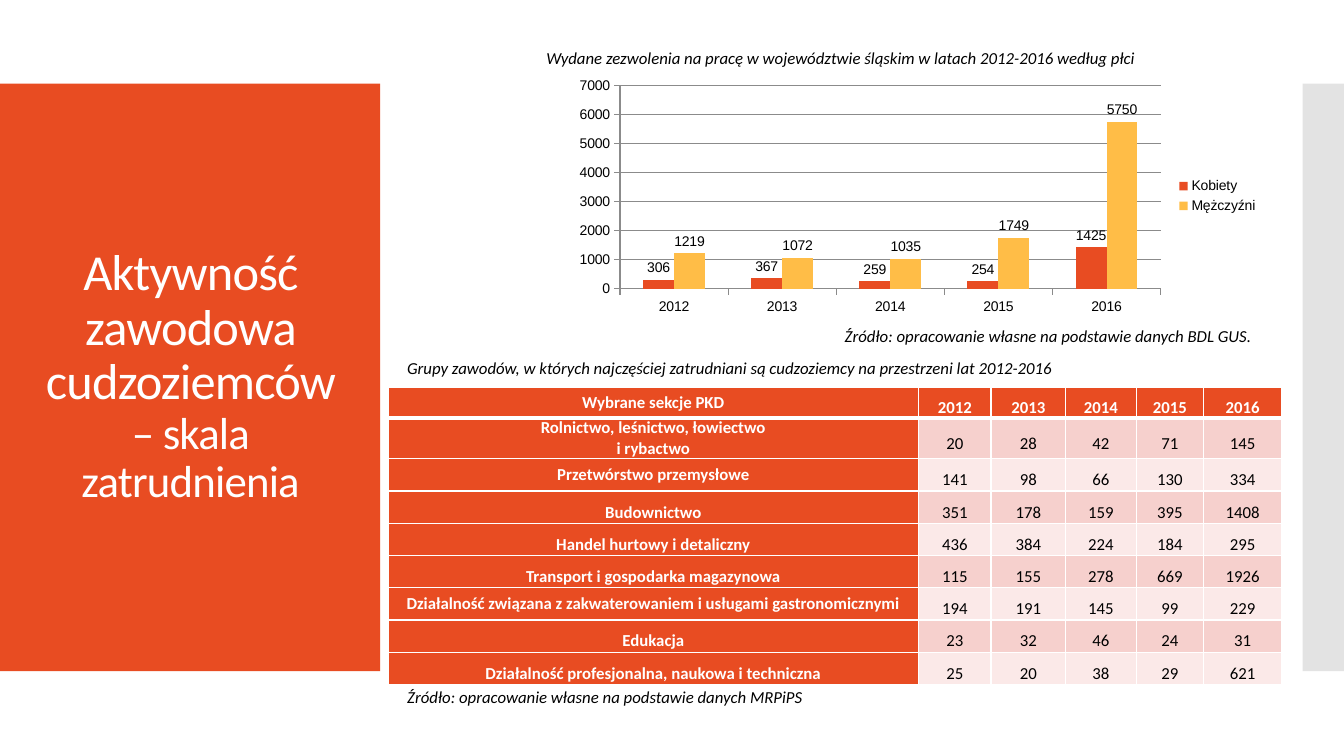
from lxml.etree import SubElement
from pptx import Presentation
from pptx.chart.data import CategoryChartData
from pptx.dml.color import RGBColor
from pptx.enum.chart import XL_CHART_TYPE as ChartType, XL_LABEL_POSITION as LabelPosition
from pptx.enum.chart import XL_LEGEND_POSITION as LegendPosition, XL_TICK_MARK as TickMark
from pptx.enum.shapes import MSO_SHAPE as Shape
from pptx.enum.text import MSO_ANCHOR as Anchor, MSO_AUTO_SIZE as AutoSize, PP_ALIGN as Align
from pptx.oxml.ns import qn
from pptx.util import Inches, Pt

COLOURS = {
    "accent": "E84C22", "amber": "FFBD47", "grey": "C8C8C8", "grid": "8B8B8B",
    "band_dark": "F6D0CD", "band_light": "FBE9E8", "white": "FFFFFF", "black": "000000",
}
YEARS = ["2012", "2013", "2014", "2015", "2016"]
PERMITS = {
    "Kobiety": ("accent", [306, 367, 259, 254, 1425]),
    "Mężczyźni": ("amber", [1219, 1072, 1035, 1749, 5750]),
}
SECTIONS = [
    ("Wybrane sekcje PKD", 1, YEARS),
    ("Rolnictwo, leśnictwo, łowiectwo\ni rybactwo", 1, [20, 28, 42, 71, 145]),
    ("Przetwórstwo przemysłowe", 1, [141, 98, 66, 130, 334]),
    ("Budownictwo", 1.5, [351, 178, 159, 395, 1408]),
    ("Handel hurtowy i detaliczny", 1.5, [436, 384, 224, 184, 295]),
    ("Transport i gospodarka magazynowa", 1.5, [115, 155, 278, 669, 1926]),
    ("Działalność związana z zakwaterowaniem i usługami gastronomicznymi", 1,
     [194, 191, 145, 99, 229]),
    ("Edukacja", 1.5, [23, 32, 46, 24, 31]),
    ("Działalność profesjonalna, naukowa i techniczna", 1.5, [25, 20, 38, 29, 621]),
]
COLUMN_WIDTHS = [5.26, 0.72, 0.74, 0.7, 0.67, 0.77]
ROW_HEIGHTS = [0.29, 0.39] + [0.32] * 7
CAPTIONS = [
    ("Wydane zezwolenia na pracę w województwie śląskim w latach 2012-2016 według płci",
     (5.32, 0.42, 6.95, 0.3), True),
    ("Źródło: opracowanie własne na podstawie danych BDL GUS.", (8.28, 3.18, 4.3, 0.3), False),
    ("Źródło: opracowanie własne na podstawie danych MRPiPS", (3.94, 6.76, 4.14, 0.3), False),
    ("Grupy zawodów, w których najczęściej zatrudniani są cudzoziemcy na przestrzeni lat 2012-2016",
     (3.94, 3.5, 6.67, 0.3), True),
]


def colour(name):
    return RGBColor.from_string(COLOURS[name])


def box(*lengths):
    return [Inches(length) for length in lengths]


def paint(fill, name):
    fill.solid()
    fill.fore_color.rgb = colour(name)


def style(font, size, name, face="Calibri"):
    font.size = Pt(size)
    font.name = face
    font.color.rgb = colour(name)


def add_panel(slide, place, fill, opacity=100):
    panel = slide.shapes.add_shape(Shape.RECTANGLE, *box(*place))
    panel.shadow.inherit = False
    panel.line.fill.background()
    paint(panel.fill, fill)
    if opacity < 100:
        tint = panel.fill._xPr.find(qn("a:solidFill"))[0]
        SubElement(tint, qn("a:alpha"), val=str(opacity * 1000))


def place_title(slide):
    title = slide.shapes.title
    slide.shapes._spTree.append(title._element)
    title.left, title.top, title.width, title.height = box(0.28, 1.23, 3.22, 5.03)
    frame = title.text_frame
    frame.word_wrap = True
    frame.auto_size = AutoSize.NONE
    frame.vertical_anchor = Anchor.MIDDLE
    heading = frame.paragraphs[0]
    heading.alignment = Align.CENTER
    heading.line_spacing = 0.9
    for text, size in (("Aktywność zawodowa cudzoziemców ", 36), ("– skala zatrudnienia", 32)):
        part = heading.add_run()
        part.text = text
        style(part.font, size, "white")
        part.font._element.set("spc", "-60")


def add_caption(slide, text, place, wrap):
    frame = slide.shapes.add_textbox(*box(*place)).text_frame
    frame.word_wrap = wrap
    frame.auto_size = AutoSize.SHAPE_TO_FIT_TEXT
    caption = frame.paragraphs[0]
    caption.text = text
    style(caption.font, 12, "black")
    caption.font.italic = True


def draw_line(line):
    line.color.rgb = colour("grid")
    line.width = Pt(0.75)


def add_permits_chart(slide):
    data = CategoryChartData()
    data.categories = YEARS
    for name, (_, values) in PERMITS.items():
        data.add_series(name, values)
    chart = slide.shapes.add_chart(
        ChartType.COLUMN_CLUSTERED, *box(5.61, 0.72, 6.97, 2.45), data).chart
    style(chart.font, 10, "black", "Arial")
    chart.has_title = False
    chart.has_legend = True
    chart.legend.position = LegendPosition.RIGHT
    chart.legend.include_in_layout = False
    for axis in (chart.category_axis, chart.value_axis):
        axis.major_tick_mark = TickMark.OUTSIDE
        axis.minor_tick_mark = TickMark.NONE
        draw_line(axis.format.line)
    chart.value_axis.has_major_gridlines = True
    draw_line(chart.value_axis.major_gridlines.format.line)
    plot = chart.plots[0]
    plot.gap_width = 150
    plot.overlap = 0
    plot.vary_by_categories = False
    for series in plot.series:
        paint(series.format.fill, PERMITS[series.name][0])
        series.invert_if_negative = False
        series.data_labels.show_value = True
        series.data_labels.position = LabelPosition.OUTSIDE_END


def set_borders(cell, widths):
    properties = cell._tc.get_or_add_tcPr()
    for side, width in zip(("lnL", "lnR", "lnT", "lnB"), widths):
        edge = SubElement(properties, qn(f"a:{side}"), w=str(Pt(width)))
        SubElement(SubElement(edge, qn("a:solidFill")), qn("a:srgbClr"), val=COLOURS["white"])


def fill_cell(cell, text, spacing, fill, is_heading, borders):
    set_borders(cell, borders)
    paint(cell.fill, fill)
    cell.vertical_anchor = Anchor.MIDDLE
    cell.margin_left = cell.margin_right = Inches(0.07)
    cell.margin_top = cell.margin_bottom = 0
    entry = cell.text_frame.paragraphs[0]
    entry.text = str(text)
    entry.alignment = Align.CENTER
    entry.line_spacing = spacing
    entry.space_before = Pt(6)
    style(entry.font, 12, "white" if is_heading else "black")
    entry.font.bold = is_heading


def add_sections_table(slide):
    table = slide.shapes.add_table(
        len(SECTIONS), len(COLUMN_WIDTHS),
        *box(3.85, 3.84, sum(COLUMN_WIDTHS), sum(ROW_HEIGHTS))).table
    for column, width in zip(table.columns, COLUMN_WIDTHS):
        column.width = Inches(width)
    for r, (section, spacing, counts) in enumerate(SECTIONS):
        table.rows[r].height = Inches(ROW_HEIGHTS[r])
        band = "band_dark" if r % 2 else "band_light"
        borders = (1, 1, 3 if r == 1 else 1, 3 if r == 0 else 1)
        for c, text in enumerate([section, *counts]):
            is_heading = r == 0 or c == 0
            fill_cell(table.cell(r, c), text, 1.5 if c else spacing,
                      "accent" if is_heading else band, is_heading, borders)


def main():
    deck = Presentation()
    deck.slide_width, deck.slide_height = box(13.33, 7.5)
    slide = deck.slides.add_slide(deck.slide_layouts[5])
    add_panel(slide, (0, 0.83, 3.77, 5.83), "accent")
    add_panel(slide, (12.92, 0.83, 0.41, 5.83), "grey", 50)
    place_title(slide)
    add_permits_chart(slide)
    add_sections_table(slide)
    for text, place, wrap in CAPTIONS:
        add_caption(slide, text, place, wrap)
    deck.save("out.pptx")


if __name__ == "__main__":
    main()
